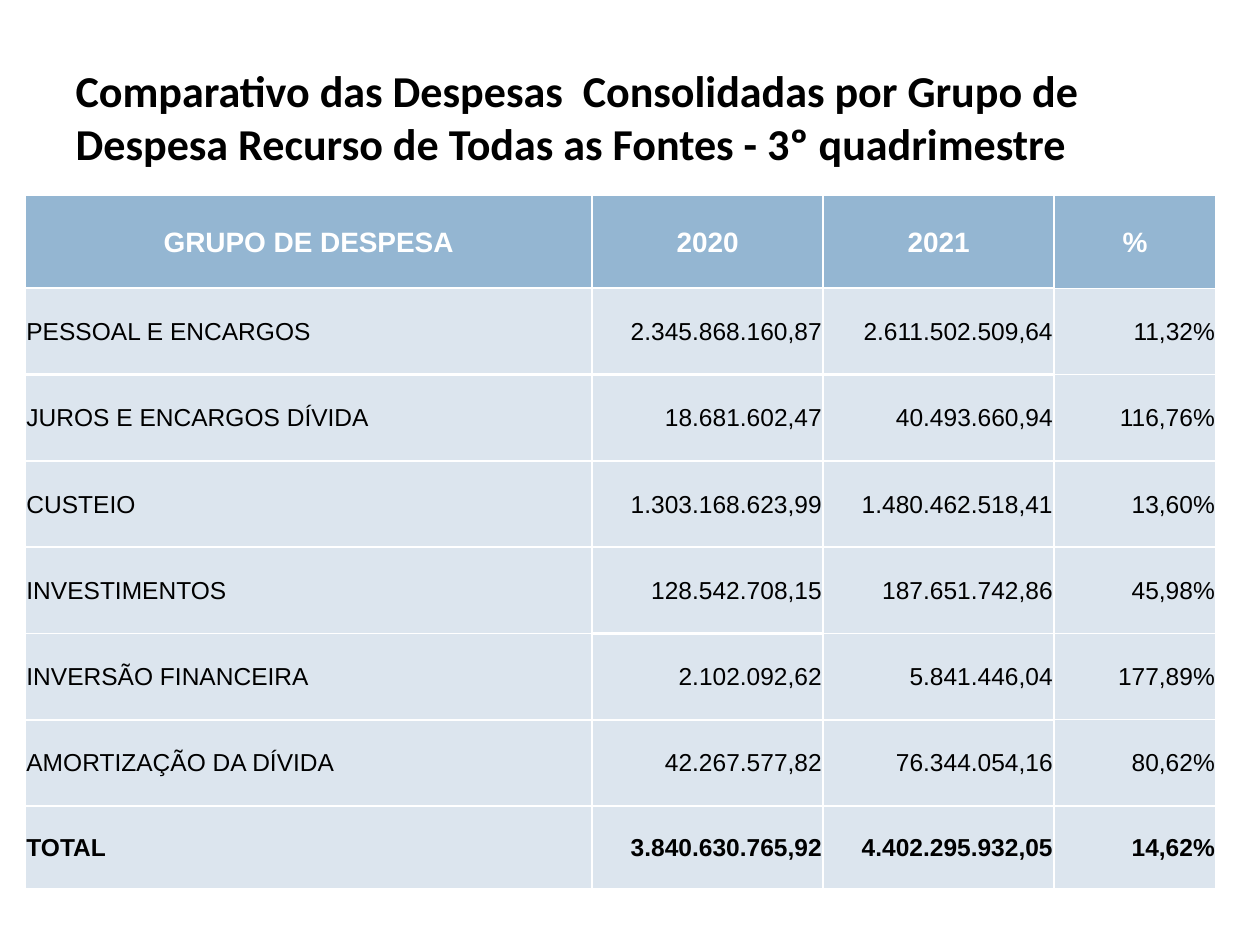
from dataclasses import dataclass

from lxml.etree import SubElement
from pptx import Presentation
from pptx.dml.color import RGBColor
from pptx.enum.text import MSO_ANCHOR, PP_ALIGN
from pptx.oxml.ns import qn
from pptx.util import Pt

BLACK = RGBColor(0x00, 0x00, 0x00)
WHITE = RGBColor(0xFF, 0xFF, 0xFF)
HEADER_BLUE = RGBColor(0x94, 0xB6, 0xD2)
BODY_BLUE = RGBColor(0xDC, 0xE5, 0xEE)

TITLE = ("Comparativo das Despesas  Consolidadas por Grupo de Despesa "
         "Recurso de Todas as Fontes - 3º quadrimestre")
EXPENSES = [
    ("GRUPO DE DESPESA", "2020", "2021", "%"),
    ("PESSOAL E ENCARGOS", "2.345.868.160,87", "2.611.502.509,64", "11,32%"),
    ("JUROS E ENCARGOS DÍVIDA", "18.681.602,47", "40.493.660,94", "116,76%"),
    ("CUSTEIO", "1.303.168.623,99", "1.480.462.518,41", "13,60%"),
    ("INVESTIMENTOS", "128.542.708,15", "187.651.742,86", "45,98%"),
    ("INVERSÃO FINANCEIRA", "2.102.092,62", "5.841.446,04", "177,89%"),
    ("AMORTIZAÇÃO DA DÍVIDA", "42.267.577,82", "76.344.054,16", "80,62%"),
    ("TOTAL", "3.840.630.765,92", "4.402.295.932,05", "14,62%"),
]
COLUMN_WIDTHS = [324, 132, 132, 92.6]
ROW_HEIGHTS = [53.2] + [49.3] * 6 + [47.4]

# Widths of the horizontal rules in each column, from the top edge to the bottom
LABEL_RULES = [1, 1.5, 1.5, 1, 1.5, 1, 1.5, 1.5, 1]
RULES = [LABEL_RULES, [1] + [1.5] * 7 + [1], LABEL_RULES, [1] * 9]


@dataclass(frozen=True)
class CellStyle:
    fill: RGBColor
    color: RGBColor
    size: float
    bold: bool


HEADER = CellStyle(HEADER_BLUE, WHITE, 16, True)
BODY = CellStyle(BODY_BLUE, BLACK, 14, False)
TOTAL = CellStyle(BODY_BLUE, BLACK, 14, True)


def set_borders(cell, top: float, bottom: float) -> None:
    """Draw white borders; the side borders are always 1 pt."""
    properties = cell._tc.get_or_add_tcPr()
    for side, width in (("L", 1), ("R", 1), ("T", top), ("B", bottom)):
        border = SubElement(properties, qn(f"a:ln{side}"), w=str(Pt(width)))
        fill = SubElement(border, qn("a:solidFill"))
        SubElement(fill, qn("a:srgbClr"), val=str(WHITE))


def fill_cell(cell, text: str, style: CellStyle, alignment: PP_ALIGN) -> None:
    cell.text = text
    cell.vertical_anchor = MSO_ANCHOR.MIDDLE
    cell.margin_left = cell.margin_right = cell.margin_top = Pt(0.7)
    cell.margin_bottom = Pt(0)
    cell.fill.solid()
    cell.fill.fore_color.rgb = style.fill
    paragraph = cell.text_frame.paragraphs[0]
    paragraph.alignment = alignment
    paragraph.font.name = "Arial"
    paragraph.font.size = Pt(style.size)
    paragraph.font.bold = style.bold
    paragraph.font.color.rgb = style.color


def add_title(slide) -> None:
    title = slide.shapes.title
    title.left, title.top, title.width, title.height = Pt(36), Pt(21.6), Pt(648), Pt(90)
    title.text = TITLE
    title.text_frame.vertical_anchor = MSO_ANCHOR.MIDDLE
    paragraph = title.text_frame.paragraphs[0]
    paragraph.alignment = PP_ALIGN.LEFT
    paragraph.font.name = "Calibri"
    paragraph.font.size = Pt(25.2)
    paragraph.font.bold = True
    paragraph.font.color.rgb = BLACK


def add_expense_table(slide) -> None:
    table = slide.shapes.add_table(
        len(EXPENSES), len(COLUMN_WIDTHS), Pt(14.4), Pt(111.6),
        Pt(sum(COLUMN_WIDTHS)), Pt(sum(ROW_HEIGHTS))).table
    table.horz_banding = False
    for column, width in zip(table.columns, COLUMN_WIDTHS):
        column.width = Pt(width)
    for row, height in zip(table.rows, ROW_HEIGHTS):
        row.height = Pt(height)

    styles = [HEADER] + [BODY] * (len(EXPENSES) - 2) + [TOTAL]
    for r, (expense, style) in enumerate(zip(EXPENSES, styles)):
        for c, text in enumerate(expense):
            if style is HEADER:
                alignment = PP_ALIGN.CENTER
            else:
                alignment = PP_ALIGN.RIGHT if c else PP_ALIGN.LEFT
            cell = table.cell(r, c)
            set_borders(cell, RULES[c][r], RULES[c][r + 1])
            fill_cell(cell, text, style, alignment)


def main() -> None:
    presentation = Presentation()
    presentation.slide_width, presentation.slide_height = Pt(720), Pt(540)
    slide = presentation.slides.add_slide(presentation.slide_layouts[5])
    add_title(slide)
    add_expense_table(slide)
    presentation.save("out.pptx")


if __name__ == "__main__":
    main()
